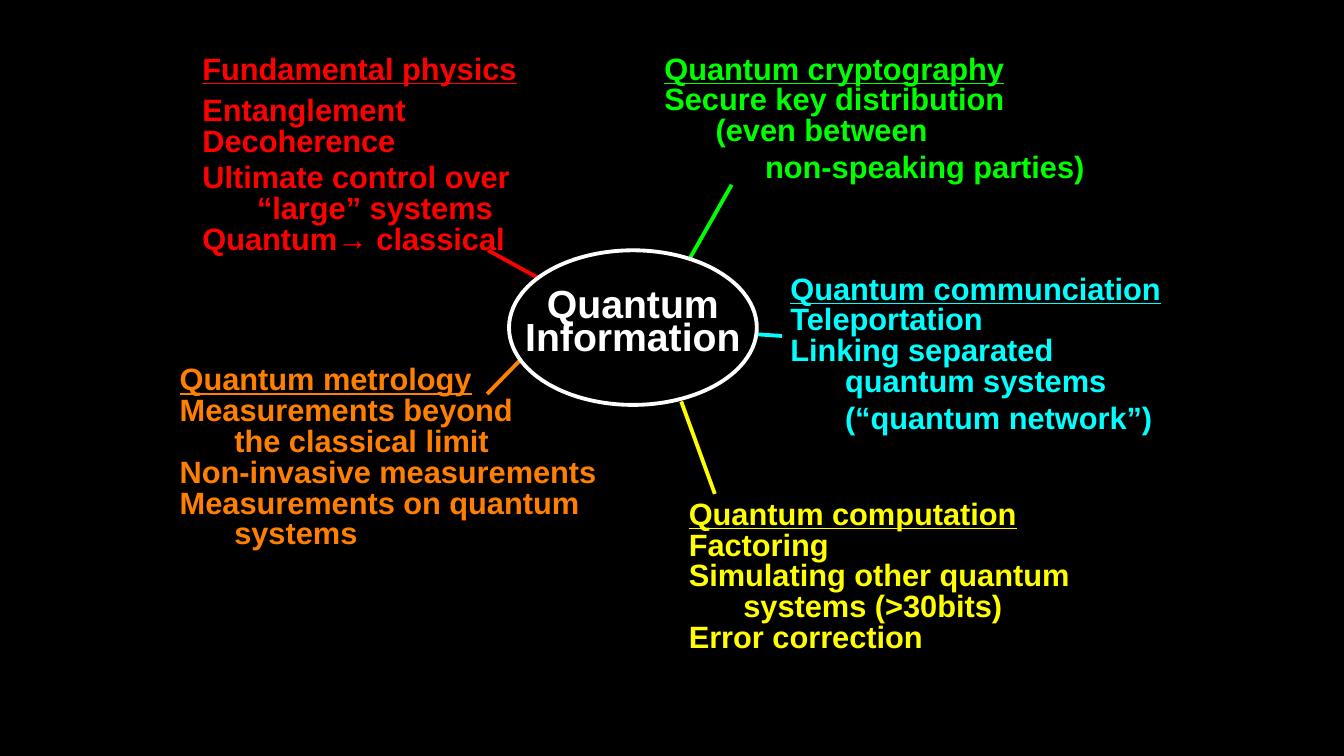
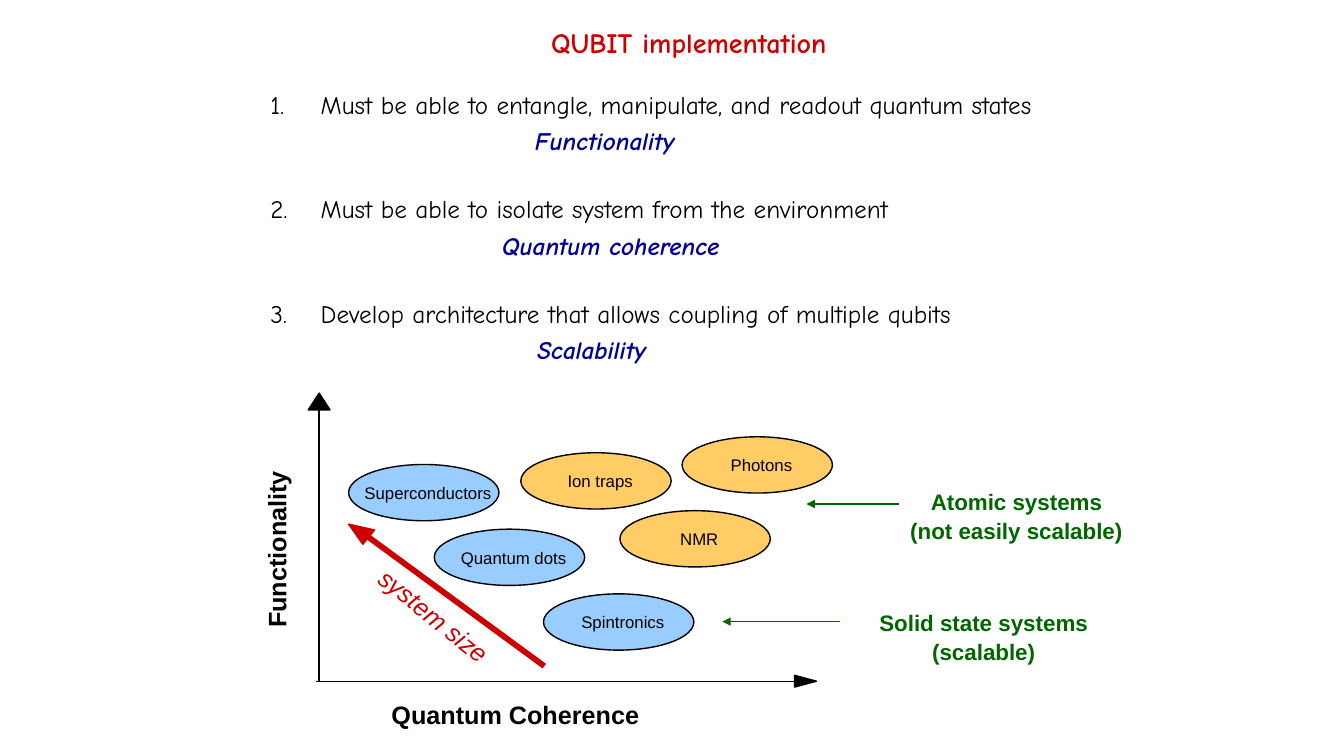
from pptx import Presentation
from pptx import util as u
from pptx.dml.color import RGBColor
from pptx.enum import shapes, text
from pptx.oxml.ns import qn
from lxml import etree

COLS, ROWS = 160, 90
SLIDE_W, SLIDE_H = u.Inches(13.333), u.Inches(7.5)
CELL = SLIDE_H / ROWS

BLACK, WHITE = "000000", "FFFFFF"
RED, NAVY, GREEN = "CC0000", "000099", "006600"
SOLID, ATOMIC = "99CCFF", "FFCC66"
SANS, COMIC = "Arial", "Comic Neue"
CENTER, LEFT = text.PP_ALIGN.CENTER, text.PP_ALIGN.LEFT

TOPICS = [
    ((24.1, 6.6), "FF0000", (58.1, 29.8, 64.1, 33.1), [
        ("Fundamental physics", 0, 0), ("Entanglement", 0, 7.5),
        ("Decoherence", 0, 0), ("Ultimate control over", 0, 4),
        ("“large” systems", 6.5, 0), ("Quantum→ classical", 0, 0)]),
    ((79.1, 6.6), "00FF00", (82.1, 30.8, 87.1, 22), [
        ("Quantum cryptography", 0, 0), ("Secure key distribution", 0, 0),
        ("(even between", 6.1, 0), ("non-speaking parties)", 12, 4.5)]),
    ((94.1, 32.8), "00FFFF", (90.1, 39.8, 93.1, 40), [
        ("Quantum communciation", 0, 0), ("Teleportation", 0, 0),
        ("Linking separated", 0, 0), ("quantum systems", 6.5, 0),
        ("(“quantum network”)", 6.5, 4.5)]),
    ((82, 59.6), "FFFF00", (81.1, 47.8, 85.1, 58.8), [
        ("Quantum computation", 0, 0), ("Factoring", 0, 0),
        ("Simulating other quantum", 0, 0), ("systems (>30bits)", 6.5, 0),
        ("Error correction", 0, 0)]),
    ((21.4, 43.6), "FF8000", (58, 46.9, 62, 42.8), [
        ("Quantum metrology", 0, 0), ("Measurements beyond", 0, 0),
        ("the classical limit", 6.5, 0), ("Non-invasive measurements", 0, 0),
        ("Measurements on quantum", 0, 0), ("systems", 6.5, 0)]),
]

REQUIREMENTS = [
    ("Must be able to entangle, manipulate, and readout quantum states",
     "Functionality", 31.5),
    ("Must be able to isolate system from the environment",
     "Quantum coherence", 27.6),
    ("Develop architecture that allows coupling of multiple qubits",
     "Scalability", 31.8),
]

SYSTEMS = [
    ("Superconductors", 3.5, 8.5, SOLID),
    ("Photons", 43.2, 5.2, ATOMIC),
    ("Quantum dots", 13.7, 16.2, SOLID),
    ("Spintronics", 26.7, 23.9, SOLID),
    ("NMR", 35.8, 14, ATOMIC),
    ("Ion traps", 24, 7.1, ATOMIC),
]

ARROWS = [
    ((-0.4, 34.3, 56.6, 34.3), [(59.2, 34.3), (56.6, 35), (56.6, 33.6)], BLACK, 1),
    ((0, 34.3, 0, 2), [(0, 0), (1.3, 2), (-1.3, 2)], BLACK, 1),
    ((26.8, 32.5, 5.4, 16.8),
     [(3.5, 15.6), (6.6, 16.3), (5.8, 17.3), (5.2, 18)], RED, 4.13),
]

CAPTIONS = [
    ("Quantum Coherence", (8.6, 36.4, 29.5, 3.6), 0, dict(bold=True)),
    ("Functionality", (-14.5, 16.8, 18.8, 3.6), 270, dict(bold=True)),
    ("system size", (5.8, 24.7, 15.7, 3.6), 39, dict(italic=True, color=RED)),
]

CALLOUTS = [
    (("Solid state systems", "(scalable)"), (62.1, 25.6), (62, 27.2, 48, 27.2)),
    (("Atomic systems", "(not easily scalable)"), (66, 11.2), (69, 13.2, 58, 13.2)),
]


def rgb(value):
    return RGBColor.from_string(value)


def cells(*values):
    return [u.Emu(round(v * CELL)) for v in values]


def shift(origin, points):
    return [v + origin[i % 2] for i, v in enumerate(points)]


def add_par(tf, content, size=18, font=SANS, color=BLACK, bold=False, italic=False,
            underline=False, align=LEFT, spacing=None, before=0, left=0, hang=0,
            number=None):
    p = tf.paragraphs[0]
    if p.runs:
        p = tf.add_paragraph()
    p.alignment = align
    p.space_before = u.Pt(before)
    if spacing:
        p.line_spacing = spacing
    pPr = p._p.get_or_add_pPr()
    margin, indent = cells(left, -hang)
    pPr.set("marL", str(margin))
    pPr.set("indent", str(indent))
    if number:
        bu = etree.SubElement(pPr, qn("a:buAutoNum"))
        bu.set("type", "arabicPeriod")
        bu.set("startAt", str(number))
    r = p.add_run()
    r.text = content
    f = r.font
    f.size, f.name, f.color.rgb = u.Pt(size), font, rgb(color)
    f.bold, f.italic, f.underline = bold, italic, underline


def frame(sp, wrap=True, anchor=text.MSO_ANCHOR.TOP, insets=(0, 0, 0, 0)):
    tf = sp.text_frame
    tf.word_wrap = wrap
    tf.vertical_anchor = anchor
    tf.margin_left, tf.margin_top, tf.margin_right, tf.margin_bottom = cells(*insets)
    return tf


def add_text(s, box, rotation=0, **layout):
    sp = s.shapes.add_textbox(*cells(*box))
    sp.rotation = rotation
    return frame(sp, **layout)


def add_ellipse(s, box, line, width, fill=None, insets=(0, 0, 0, 0)):
    sp = s.shapes.add_shape(shapes.MSO_SHAPE.OVAL, *cells(*box))
    sp.shadow.inherit = False
    if fill:
        sp.fill.solid()
        sp.fill.fore_color.rgb = rgb(fill)
    else:
        sp.fill.background()
    sp.line.color.rgb, sp.line.width = rgb(line), u.Pt(width)
    return frame(sp, False, text.MSO_ANCHOR.MIDDLE, insets)


def add_line(s, ends, color, width, arrow=False):
    ln = s.shapes.add_connector(shapes.MSO_CONNECTOR.STRAIGHT, *cells(*ends))
    ln.line.color.rgb, ln.line.width = rgb(color), u.Pt(width)
    if arrow:
        tail = etree.SubElement(ln.line._get_or_add_ln(), qn("a:tailEnd"))
        tail.set("type", "triangle")
    etree.SubElement(ln._element.spPr, qn("a:effectLst"))


def add_head(s, points, color):
    first, *rest = [cells(*pt) for pt in points]
    fb = s.shapes.build_freeform(*first, scale=1.0)
    fb.add_line_segments(rest, close=True)
    sp = fb.convert_to_shape()
    sp.shadow.inherit = False
    sp.fill.solid()
    sp.fill.fore_color.rgb = rgb(color)
    sp.line.color.rgb, sp.line.width = rgb(color), u.Pt(1)


def add_slide(prs, color):
    s = prs.slides.add_slide(prs.slide_layouts[6])
    s.background.fill.solid()
    s.background.fill.fore_color.rgb = rgb(color)
    return s


def hub(s, box):
    tf = add_ellipse(s, box, WHITE, 2.75, insets=(0, 0, 0, 0.4))
    for word in ("Quantum", "Information"):
        add_par(tf, word, size=28, color=WHITE, bold=True, align=CENTER,
                spacing=u.Pt(24))


def topic(s, corner, color, link, lines):
    tf = add_text(s, (*corner, 54, 3.7 * len(lines)))
    for i, (line, left, before) in enumerate(lines):
        add_par(tf, line, size=22, color=color, bold=True, underline=i == 0,
                left=left, before=before, spacing=u.Pt(22))
    add_line(s, link, color, 2.75)


def title(s, box, content):
    tf = add_text(s, box, anchor=text.MSO_ANCHOR.MIDDLE)
    add_par(tf, content, size=20, font=COMIC, color=RED, bold=True, align=CENTER)


def requirements(s, box):
    tf = add_text(s, box, insets=(1.2, 0.6, 1.2, 0.6))
    for n, (need, name, left) in enumerate(REQUIREMENTS, 1):
        add_par(tf, need, font=COMIC, left=6, hang=6, number=n,
                spacing=1.2 if n > 1 else None, before=23 if n > 1 else 0)
        add_par(tf, name, font=COMIC, color=NAVY, bold=True, italic=True,
                left=left, spacing=1.2)


def systems_map(s, origin):
    for ends, head, color, width in ARROWS:
        add_line(s, shift(origin, ends), color, width)
        add_head(s, [shift(origin, pt) for pt in head], color)
    for name, x, y, fill in SYSTEMS:
        box = (*shift(origin, (x, y)), 17.9, 6.7)
        tf = add_ellipse(s, box, BLACK, 1, fill, insets=(1, 0, 0, 0))
        add_par(tf, name, size=12, align=CENTER)
    for caption, (x, y, w, h), rotation, style in CAPTIONS:
        tf = add_text(s, (*shift(origin, (x, y)), w, h), rotation, wrap=False)
        add_par(tf, caption, align=CENTER, **style)
    for lines, corner, ends in CALLOUTS:
        tf = add_text(s, (*shift(origin, corner), 34, 6.4))
        for line in lines:
            add_par(tf, line, size=16, color=GREEN, bold=True, align=CENTER,
                    spacing=1.05)
        add_line(s, shift(origin, ends), GREEN, 0.75, arrow=True)


def main():
    prs = Presentation()
    prs.slide_width, prs.slide_height = SLIDE_W, SLIDE_H

    s = add_slide(prs, BLACK)
    for item in TOPICS:
        topic(s, *item)
    hub(s, (60.6, 29.8, 29.5, 18.4))

    s = add_slide(prs, WHITE)
    title(s, (31, 2, 102, 6), "QUBIT implementation")
    requirements(s, (31, 10, 102.6, 34.2))
    systems_map(s, (38, 46.8))

    prs.save("out.pptx")


if __name__ == "__main__":
    main()
